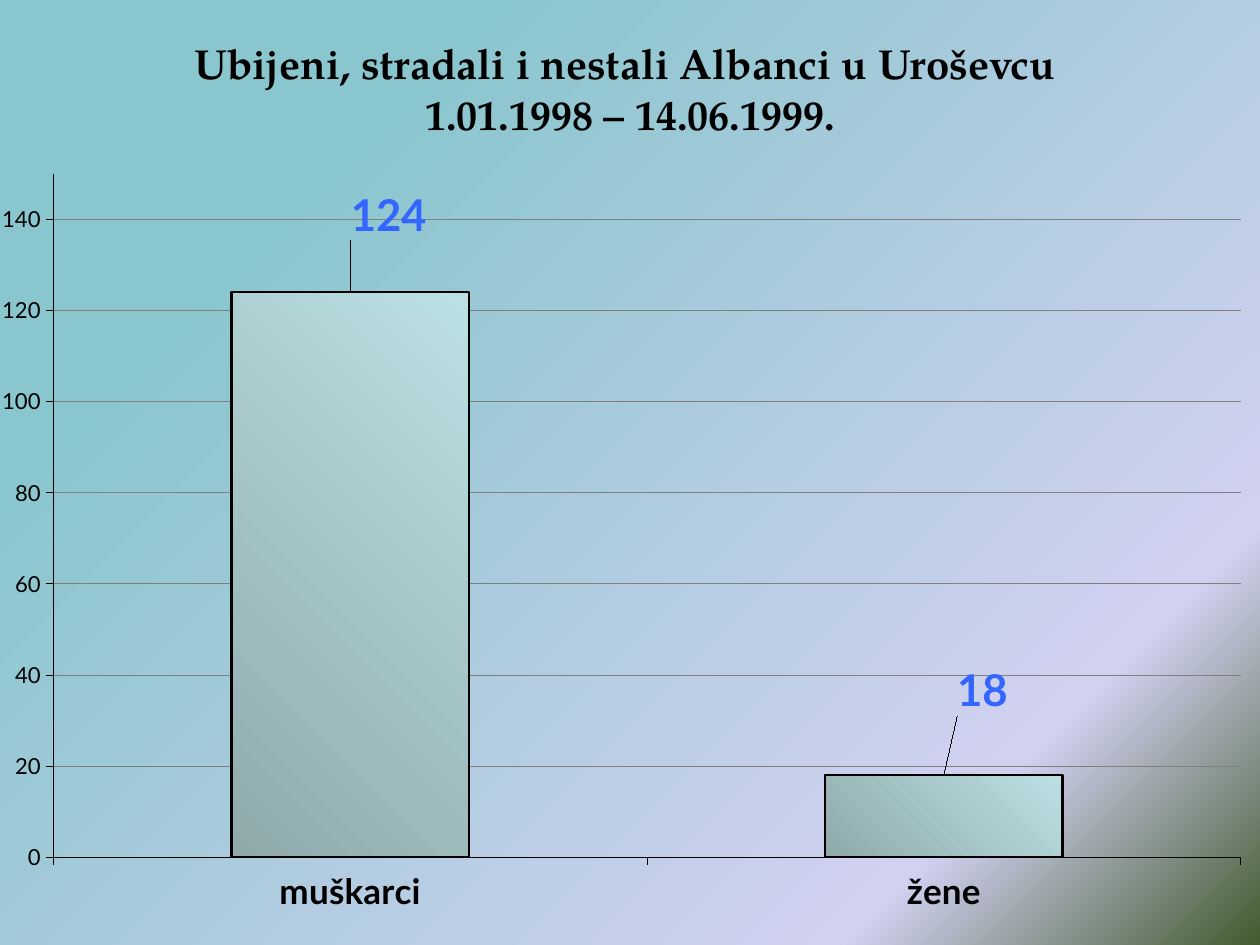
from copy import deepcopy
from dataclasses import dataclass

from pptx import Presentation
from pptx.chart.data import CategoryChartData
from pptx.dml.color import RGBColor
from pptx.enum.chart import XL_CHART_TYPE, XL_LABEL_POSITION, XL_TICK_LABEL_POSITION, XL_TICK_MARK
from pptx.enum.text import MSO_ANCHOR, PP_ALIGN
from pptx.oxml import parse_xml
from pptx.oxml.ns import nsdecls, qn
from pptx.util import Inches, Pt

COLUMN = XL_CHART_TYPE.COLUMN_CLUSTERED
ABOVE = XL_LABEL_POSITION.OUTSIDE_END
LOW = XL_TICK_LABEL_POSITION.LOW
OUT = XL_TICK_MARK.OUTSIDE
TOP = MSO_ANCHOR.TOP
CENTER = PP_ALIGN.CENTER

COLORS = {
    "text": "000000", "grid": "808080", "label": "3366FF",
    "teal": "8AC6CD", "lilac": "D1D1F0", "green": "425B30",
    "bar_dark": "90AAAC", "bar_light": "BBE0E3",
}
HEAD_FONT, BODY_FONT = "TeX Gyre Pagella", "Lato"


@dataclass
class Bar:
    name: str
    value: int
    dx: float  # label shift, as a share of the chart size
    dy: float


BARS = [Bar("muškarci", 124, 0.03, -0.06), Bar("žene", 18, 0.03, -0.07)]


def rgb(key: str) -> RGBColor:
    return RGBColor.from_string(COLORS[key])


def style(font, name: str, size: float, color: str, bold: bool) -> None:
    font.name, font.size, font.bold = name, Pt(size), bold
    font.color.rgb = rgb(color)


def rule(line, color: str, width: float) -> None:
    line.color.rgb = rgb(color)
    line.width = Pt(width)


def shade(fill, stops: list, angle: float) -> None:
    fill.gradient_angle = angle
    for stop, (pos, color) in zip(fill.gradient_stops, stops):
        stop.position = pos
        stop.color.rgb = rgb(color)


def layout(x: float, y: float, size: str = "") -> object:
    """Manual chart layout: a shift, or with a size, the inner plot area."""
    mode = ('<c:layoutTarget val="inner"/><c:xMode val="edge"/><c:yMode val="edge"/>'
            if size else "")
    return parse_xml(
        f'<c:layout {nsdecls("c")}><c:manualLayout>{mode}'
        f'<c:x val="{x}"/><c:y val="{y}"/>{size}</c:manualLayout></c:layout>')


def set_back(slide) -> None:
    fill = slide.background.fill
    fill.gradient()
    stops = slide.element.find(".//" + qn("a:gsLst"))
    stops.append(deepcopy(stops[-1]))
    shade(fill, [(0.22, "teal"), (0.81, "lilac"), (1, "green")], 315)


def set_title(slide) -> None:
    title = slide.shapes.title
    title.left, title.top = Inches(0), Inches(0.25)
    title.width, title.height = Inches(10), Inches(1.25)
    frame = title.text_frame
    frame.text = "Ubijeni, stradali i nestali Albanci u Uroševcu \v1.01.1998 – 14.06.1999."
    frame.vertical_anchor = TOP
    frame.word_wrap = True
    para = frame.paragraphs[0]
    para.alignment = CENTER
    for run in para.runs:
        style(run.font, HEAD_FONT, 24, "text", True)


def add_bars(slide) -> None:
    data = CategoryChartData()
    data.categories = [bar.name for bar in BARS]
    data.add_series("Series 1", [bar.value for bar in BARS])
    chart = slide.shapes.add_chart(
        COLUMN, Inches(-0.21), Inches(1.25), Inches(10.21), Inches(6.13), data).chart
    chart.has_title = chart.has_legend = False
    style(chart.font, BODY_FONT, 23.3, "text", True)

    # Plot area
    area = chart.element.find(".//" + qn("c:plotArea"))
    for old in area.findall(qn("c:layout")):
        area.remove(old)
    area.insert(0, layout(0.062, 0.021, '<c:w val="0.923"/><c:h val="0.885"/>'))

    # Axes
    cats, vals = chart.category_axis, chart.value_axis
    for axis, size, bold in ((cats, 20, True), (vals, 12.6, False)):
        axis.major_tick_mark = OUT
        style(axis.tick_labels.font, BODY_FONT, size, "text", bold)
        rule(axis.format.line, "text", 0.31)
    cats.tick_label_position = LOW
    vals.minimum_scale, vals.maximum_scale, vals.major_unit = 0, 150, 20
    vals.has_major_gridlines = True
    rule(vals.major_gridlines.format.line, "grid", 0.31)

    # Bars
    plot = chart.plots[0]
    plot.gap_width = 150
    plot.vary_by_categories = False
    series = plot.series[0]
    series.format.fill.gradient()
    shade(series.format.fill, [(0, "bar_dark"), (1, "bar_light")], 45)
    rule(series.format.line, "text", 1.25)

    # Value labels, shifted up and to the right
    for i in range(len(BARS)):
        label = series.points[i].data_label
        style(label.font, BODY_FONT, 25, "label", True)
        label.position = ABOVE
    for bar, node in zip(BARS, chart.element.iter(qn("c:dLbl"))):
        node.insert(1, layout(bar.dx, bar.dy))


def main() -> None:
    deck = Presentation()
    deck.slide_width, deck.slide_height = Inches(10), Inches(7.5)
    slide = deck.slides.add_slide(deck.slide_layouts[5])
    set_back(slide)
    set_title(slide)
    add_bars(slide)
    deck.save("out.pptx")


if __name__ == "__main__":
    main()
